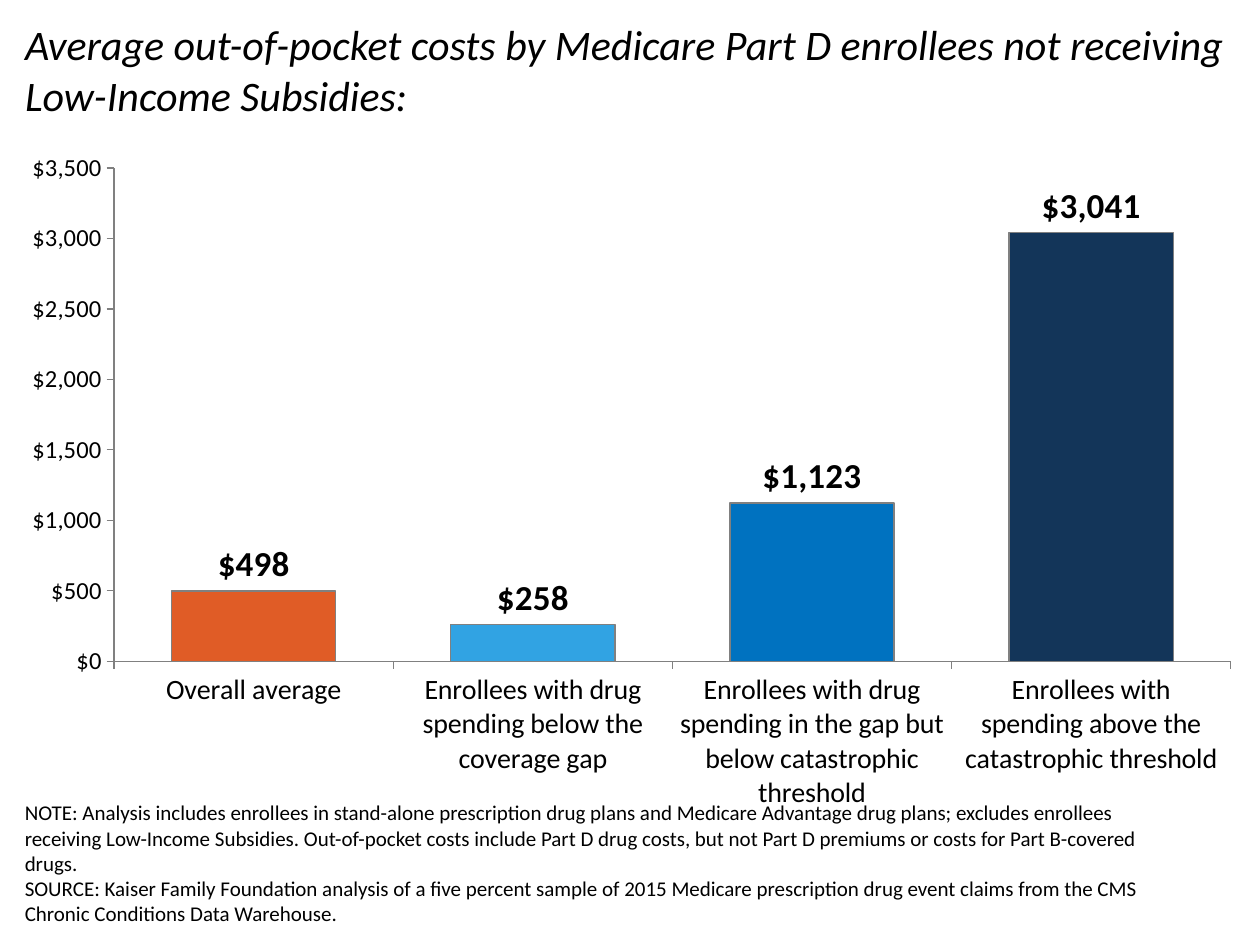
from pptx import Presentation
from pptx.chart.data import CategoryChartData
from pptx.dml.color import RGBColor
from pptx.enum.chart import XL_CHART_TYPE, XL_LABEL_POSITION, XL_TICK_MARK
from pptx.enum.text import MSO_ANCHOR, MSO_AUTO_SIZE, PP_ALIGN
from pptx.oxml import parse_xml
from pptx.oxml.ns import nsdecls
from pptx.util import Cm, Pt


def color(value):
    return RGBColor.from_string(value)


def style_font(font, size, bold=False, italic=False):
    font.name = "Calibri"
    font.size = Pt(size)
    font.bold = bold
    font.italic = italic
    font.color.rgb = color("000000")


deck = Presentation()
deck.slide_width, deck.slide_height = Cm(25.4), Cm(19.05)
page = deck.slides.add_slide(deck.slide_layouts[5])

# Column chart
costs = {
    "Overall average": (498, "E05C26"),
    "Enrollees with drug spending below the coverage gap": (258, "31A3E3"),
    "Enrollees with drug spending in the gap but below catastrophic threshold": (1123, "0072C0"),
    "Enrollees with spending above the catastrophic threshold": (3041, "133559"),
}
data = CategoryChartData()
data.categories = list(costs)
data.add_series("Series 1", [amount for amount, fill in costs.values()])
chart = page.shapes.add_chart(XL_CHART_TYPE.COLUMN_CLUSTERED, Cm(0.25), Cm(2.54),
                              Cm(24.71), Cm(14.35), data).chart
chart.has_legend = False
chart.has_title = False
style_font(chart.font, 10)

# Axes
for axis, size in ((chart.category_axis, 16), (chart.value_axis, 14)):
    axis.has_major_gridlines = False
    axis.major_tick_mark = XL_TICK_MARK.OUTSIDE
    axis.minor_tick_mark = XL_TICK_MARK.NONE
    axis.format.line.color.rgb = color("808080")
    axis.format.line.width = Pt(0.75)
    style_font(axis.tick_labels.font, size)
dollars = '"$"#,##0'
chart.value_axis.minimum_scale = 0
chart.value_axis.maximum_scale = 3500
chart.value_axis.major_unit = 500
chart.value_axis.tick_labels.number_format = dollars
chart.value_axis.tick_labels.number_format_is_linked = False

# Columns and their labels
plot = chart.plots[0]
plot.vary_by_categories = False
plot.gap_width = 70
plot.overlap = 100
series = plot.series[0]
for index, (amount, fill) in enumerate(costs.values()):
    column = series.points[index].format
    column.fill.solid()
    column.fill.fore_color.rgb = color(fill)
    column.line.color.rgb = color("808080")
    column.line.width = Pt(0.75)
labels = series.data_labels
labels.show_value = True
labels.position = XL_LABEL_POSITION.OUTSIDE_END
labels.number_format = dollars
labels.number_format_is_linked = False
style_font(labels.font, 20, bold=True)

# Fixed position of the plot area, as fractions of the chart
plot_area = chart.element.chart.plotArea
for layout in plot_area.findall("{*}layout"):
    plot_area.remove(layout)
plot_area.insert(0, parse_xml(
    f'<c:layout {nsdecls("c")}><c:manualLayout><c:layoutTarget val="inner"/>'
    '<c:xMode val="edge"/><c:yMode val="edge"/><c:x val="0.083"/><c:y val="0.059"/>'
    '<c:w val="0.911"/><c:h val="0.693"/></c:manualLayout></c:layout>'))

# Note and source
note = page.shapes.add_textbox(Cm(0.25), Cm(17.27), Cm(23.11), Cm(1.52)).text_frame
note.word_wrap = True
note.auto_size = MSO_AUTO_SIZE.NONE
note.vertical_anchor = MSO_ANCHOR.BOTTOM
note.text = (
    "NOTE: Analysis includes enrollees in stand-alone prescription drug plans and Medicare "
    "Advantage drug plans; excludes enrollees receiving Low-Income Subsidies. Out-of-pocket "
    "costs include Part D drug costs, but not Part D premiums or costs for Part B-covered drugs.\n"
    "SOURCE: Kaiser Family Foundation analysis of a five percent sample of 2015 Medicare "
    "prescription drug event claims from the CMS Chronic Conditions Data Warehouse.")
for para in note.paragraphs:
    style_font(para.font, 12)

# Title
title = page.shapes.title
title.left, title.top, title.width, title.height = Cm(0.25), Cm(0.25), Cm(24.89), Cm(2.54)
title.text_frame.text = ("Average out-of-pocket costs by Medicare Part D enrollees "
                         "not receiving Low-Income Subsidies:")
title.text_frame.word_wrap = True
title.text_frame.auto_size = MSO_AUTO_SIZE.NONE
title.text_frame.vertical_anchor = MSO_ANCHOR.TOP
heading = title.text_frame.paragraphs[0]
heading.alignment = PP_ALIGN.LEFT
style_font(heading.font, 24, italic=True)

deck.save("out.pptx")
